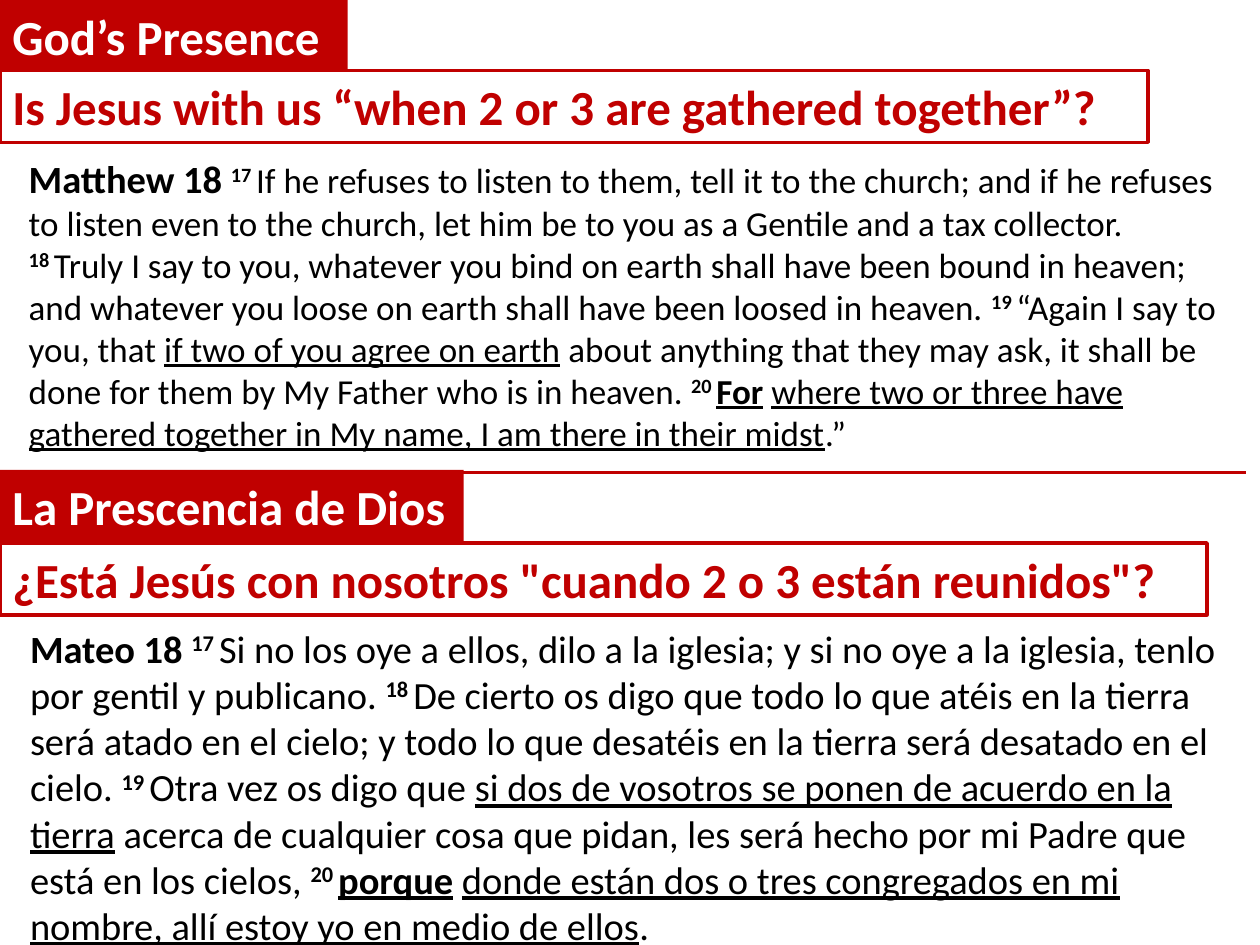
from lxml.etree import SubElement
from pptx import Presentation
from pptx.dml.color import RGBColor
from pptx.enum.shapes import MSO_CONNECTOR as Connector, MSO_SHAPE as Shape
from pptx.enum.text import MSO_ANCHOR as Anchor, MSO_AUTO_SIZE as AutoSize, PP_ALIGN as Align
from pptx.oxml.ns import qn
from pptx.util import Inches, Pt

RED = RGBColor(0xC0, 0x00, 0x00)
WHITE = RGBColor(0xFF, 0xFF, 0xFF)
BLACK = RGBColor(0x00, 0x00, 0x00)
FONT = "Calibri"
BANNER_HEIGHT = 0.57

PLAIN, BOLD, VERSE, UNDERLINE, STRONG = "", "b", "bv", "u", "bu"

MATTHEW = [
    [
        ("17 ", VERSE),
        ("If he refuses to listen to them, tell it to the church; and if he refuses to listen "
         "even to the church, let him be to you as a Gentile and a tax collector.", PLAIN),
    ],
    [
        ("18 ", VERSE),
        ("Truly I say to you, whatever you bind on earth shall have been bound in heaven; "
         "and whatever you loose on earth shall have been loosed in heaven. ", PLAIN),
        ("19 ", VERSE),
        ("“Again I say to you, that ", PLAIN),
        ("if two of you agree on earth", UNDERLINE),
        (" about anything that they may ask, it shall be", PLAIN),
    ],
    [
        ("done for them by My Father who is in heaven. ", PLAIN),
        ("20 ", VERSE),
        ("For", STRONG),
        (" ", PLAIN),
        ("where two or three have gathered together in My name, "
         "I am there in their midst", UNDERLINE),
        (".”", PLAIN),
    ],
]

MATEO = [
    [
        ("17 ", VERSE),
        ("Si no los oye a ellos, dilo a la iglesia; y si no oye a la iglesia, "
         "tenlo por gentil y publicano. ", PLAIN),
        ("18 ", VERSE),
        ("De cierto os digo que todo lo que atéis en la tierra será atado en el cielo; "
         "y todo lo que desatéis en la tierra será desatado en el cielo. ", PLAIN),
        ("19 ", VERSE),
        ("Otra vez os digo que ", PLAIN),
        ("si dos de vosotros se ponen de acuerdo en la tierra", UNDERLINE),
        (" acerca de cualquier cosa que pidan, les será hecho por mi Padre "
         "que está en los cielos, ", PLAIN),
        ("20 ", VERSE),
        ("porque", STRONG),
        (" ", PLAIN),
        ("donde están dos o tres congregados en mi nombre, "
         "allí estoy yo en medio de ellos", UNDERLINE),
        (".", PLAIN),
    ],
]


def add_banner(slide, text, top, width, fill, color, outline=None):
    banner = slide.shapes.add_shape(
        Shape.RECTANGLE, 0, Inches(top), Inches(width), Inches(BANNER_HEIGHT))
    banner.shadow.inherit = False
    if fill is None:
        banner.fill.background()
    else:
        banner.fill.solid()
        banner.fill.fore_color.rgb = fill
    if outline is None:
        banner.line.fill.background()
    else:
        banner.line.color.rgb = outline
        banner.line.width = Pt(2)
    frame = banner.text_frame
    frame.word_wrap = True
    frame.auto_size = AutoSize.SHAPE_TO_FIT_TEXT
    frame.vertical_anchor = Anchor.TOP
    heading = frame.paragraphs[0]
    heading.text = text
    heading.alignment = Align.LEFT
    heading.font.name = FONT
    heading.font.size = Pt(28)
    heading.font.bold = True
    heading.font.color.rgb = color


def add_phrase(paragraph, text, style, size):
    phrase = paragraph.add_run()
    phrase.text = text
    phrase.font.size = Pt(size)
    phrase.font.bold = "b" in style
    phrase.font.underline = "u" in style
    phrase.font.name = FONT
    phrase.font.color.rgb = BLACK
    if "v" in style:
        phrase._r.get_or_add_rPr().set("baseline", "30000")


def add_passage(slide, reference, verses, left, top, height, size):
    passage = slide.shapes.add_textbox(
        Inches(left), Inches(top), Inches(9.74), Inches(height))
    frame = passage.text_frame
    frame.word_wrap = True
    frame.auto_size = AutoSize.SHAPE_TO_FIT_TEXT
    for index, phrases in enumerate(verses):
        paragraph = frame.add_paragraph() if index else frame.paragraphs[0]
        if index == 0:
            add_phrase(paragraph, reference, BOLD, 22)
        for text, style in phrases:
            add_phrase(paragraph, text, style, size)


def add_divider(slide, left, right, top):
    divider = slide.shapes.add_connector(
        Connector.STRAIGHT, Inches(left), Inches(top), Inches(right), Inches(top))
    divider.line.color.rgb = RED
    divider.line.width = Pt(2)
    SubElement(divider._element.spPr, qn("a:effectLst"))


def main():
    deck = Presentation()
    deck.slide_width = Inches(10)
    deck.slide_height = Inches(7.5)
    slide = deck.slides.add_slide(deck.slide_layouts[6])

    add_passage(slide, "Matthew 18 ", MATTHEW, 0.13, 1.18, 2.49, 20)
    add_banner(slide, "God’s Presence", 0, 2.76, RED, WHITE)
    add_divider(slide, 0.14, 9.89, 3.75)
    add_banner(slide, "Is Jesus with us “when 2 or 3 are gathered together”?",
               0.56, 9.11, None, RED, RED)
    add_banner(slide, "La Prescencia de Dios", 3.73, 3.68, RED, WHITE)
    add_banner(slide, "¿Está Jesús con nosotros \"cuando 2 o 3 están reunidos\"?",
               4.31, 9.58, WHITE, RED, RED)
    add_passage(slide, "Mateo 18 ", MATEO, 0.14, 4.91, 2.69, 22)

    deck.save("out.pptx")


if __name__ == "__main__":
    main()
